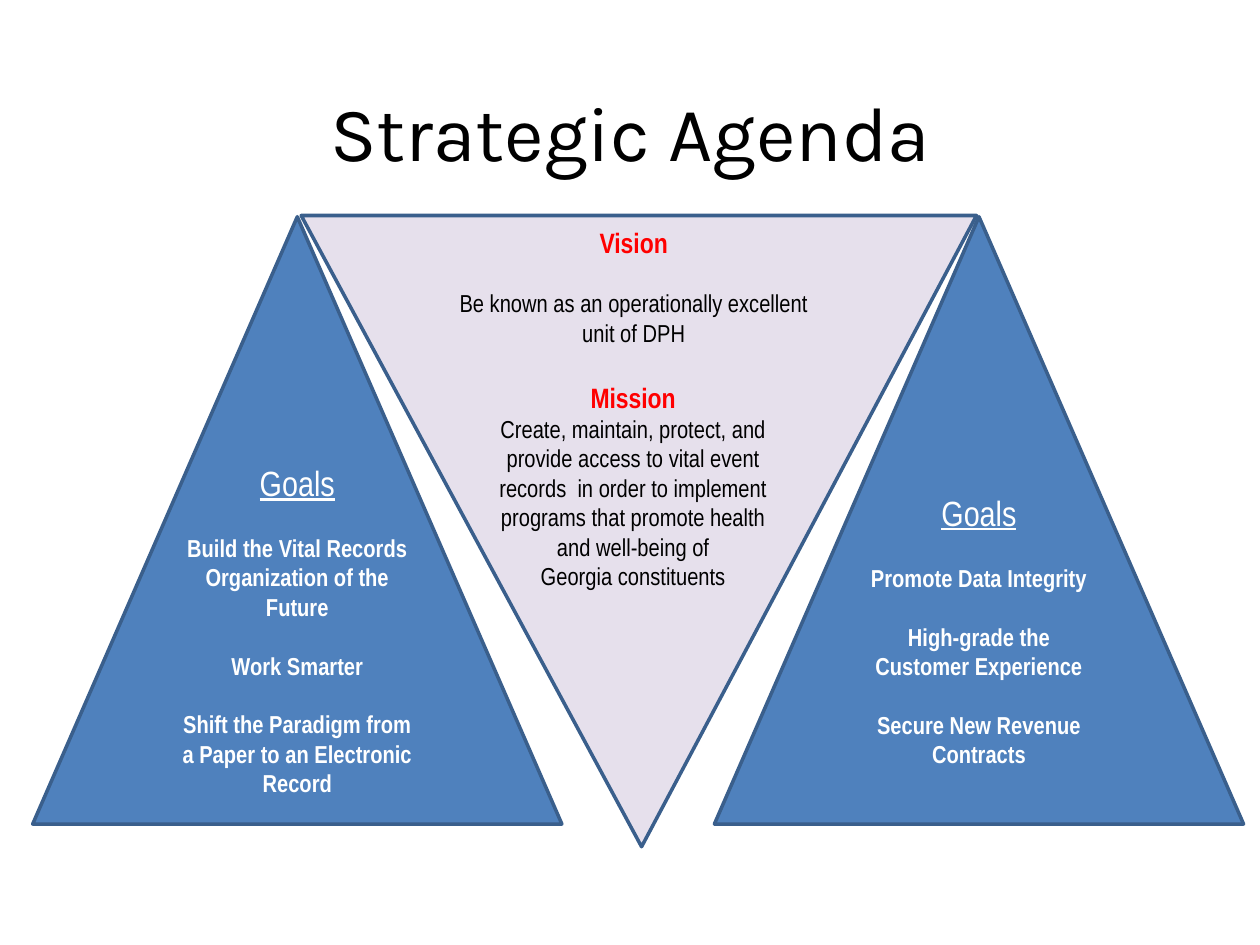
from dataclasses import dataclass

from pptx import Presentation
from pptx.dml.color import RGBColor
from pptx.enum.shapes import MSO_SHAPE
from pptx.enum.text import MSO_ANCHOR, PP_ALIGN
from pptx.util import Inches, Pt

BLACK, WHITE, RED = "000000", "FFFFFF", "FF0000"
BLUE, LILAC, OUTLINE = "4F81BD", "E6E0EC", "3A5F8C"
BODY_FONT = "Arial Narrow"
LINE_GAP = 16.75


@dataclass
class Line:
    text: str
    size: float = 14
    color: str = BLACK
    bold: bool = False
    underline: bool = False
    gap: float = 0


@dataclass
class GoalPanel:
    left: float
    bottom_inset: float
    goals: list[str]


@dataclass
class Statement:
    left: float
    top: float
    width: float
    height: float
    lines: list[Line]


PANELS = [
    GoalPanel(5.67, 0.44, [
        "Promote Data Integrity",
        "High-grade the Customer Experience",
        "Secure New Revenue Contracts",
    ]),
    GoalPanel(0.26, 0.21, [
        "Build the Vital Records Organization of the Future",
        "Work Smarter",
        "Shift the Paradigm from a Paper to an Electronic Record",
    ]),
]

STATEMENTS = [
    Statement(3.36, 1.74, 3.34, 1.08, [
        Line("Vision", 16, RED, bold=True),
        Line("Be known as an operationally excellent", gap=LINE_GAP),
        Line("unit of DPH"),
    ]),
    Statement(3.84, 2.97, 2.37, 1.78, [
        Line("Mission", 16, RED, bold=True),
        Line("Create, maintain, protect, and provide access to vital event "
             "records  in order to implement programs that promote health "
             "and well-being of"),
        Line("Georgia constituents"),
    ]),
]


def rgb(value: str) -> RGBColor:
    return RGBColor.from_string(value)


def write(para, text: str, *, size: float, color: str, font: str = BODY_FONT,
          bold: bool = False, underline: bool = False, gap: float = 0) -> None:
    para.alignment = PP_ALIGN.CENTER
    if gap:
        para.space_before = Pt(gap)
    span = para.add_run()
    span.text = text
    span.font.name = font
    span.font.size = Pt(size)
    span.font.bold = bold
    span.font.underline = underline
    span.font.color.rgb = rgb(color)


def write_lines(frame, lines: list[Line]) -> None:
    frame.word_wrap = True
    for index, line in enumerate(lines):
        para = frame.add_paragraph() if index else frame.paragraphs[0]
        write(para, line.text, size=line.size, color=line.color,
              bold=line.bold, underline=line.underline, gap=line.gap)


def add_triangle(page, left: float, top: float, width: float, height: float, fill: str):
    triangle = page.shapes.add_shape(
        MSO_SHAPE.ISOSCELES_TRIANGLE,
        Inches(left), Inches(top), Inches(width), Inches(height))
    triangle.shadow.inherit = False
    triangle.fill.solid()
    triangle.fill.fore_color.rgb = rgb(fill)
    triangle.line.color.rgb = rgb(OUTLINE)
    triangle.line.width = Pt(2)
    return triangle


def add_goal_panel(page, panel: GoalPanel) -> None:
    frame = add_triangle(page, panel.left, 1.72, 4.2, 4.82, BLUE).text_frame
    frame.vertical_anchor = MSO_ANCHOR.BOTTOM
    frame.margin_bottom = Inches(panel.bottom_inset)
    heading = Line("Goals", 20, WHITE, underline=True)
    goals = [Line(goal, color=WHITE, bold=True, gap=LINE_GAP) for goal in panel.goals]
    write_lines(frame, [heading, *goals])


def add_statement(page, statement: Statement) -> None:
    box = page.shapes.add_textbox(
        Inches(statement.left), Inches(statement.top),
        Inches(statement.width), Inches(statement.height))
    write_lines(box.text_frame, statement.lines)


def add_title(page, text: str) -> None:
    title = page.shapes.title
    title.left, title.top = Inches(0.17), Inches(0.5)
    title.width, title.height = Inches(9.67), Inches(1.08)
    title.text_frame.vertical_anchor = MSO_ANCHOR.MIDDLE
    write(title.text_frame.paragraphs[0], text, size=44, color=BLACK, font="Karla")


def main() -> None:
    deck = Presentation()
    deck.slide_width, deck.slide_height = Inches(10), Inches(7.5)
    page = deck.slides.add_slide(deck.slide_layouts[5])
    add_title(page, "Strategic Agenda")

    center = add_triangle(page, 2.39, 1.71, 5.36, 5.01, LILAC)
    center.rotation = 180
    center.adjustments[0] = 0.496

    for panel in PANELS:
        add_goal_panel(page, panel)
    for statement in STATEMENTS:
        add_statement(page, statement)
    deck.save("out.pptx")


if __name__ == "__main__":
    main()
